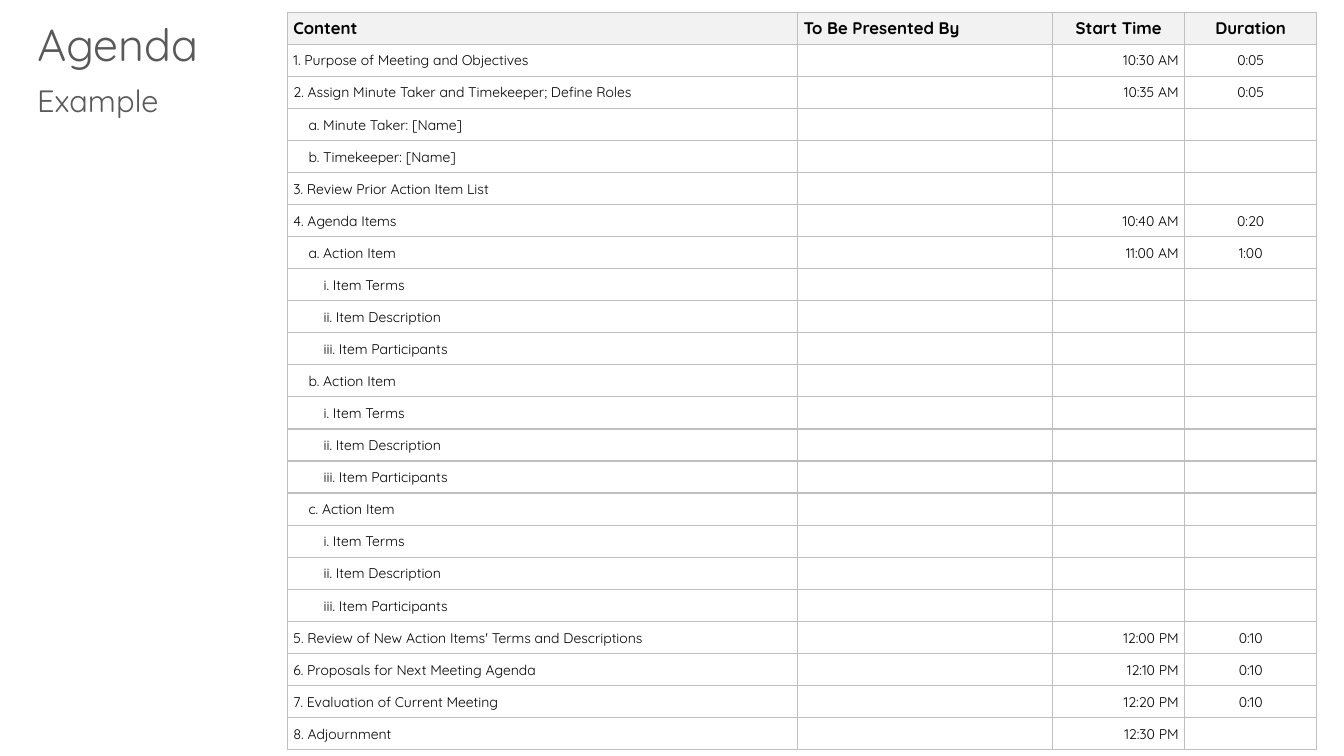
import pptx
import pptx.util
import pptx.dml.color
import pptx.enum.text
import pptx.oxml
import pptx.oxml.ns
from dataclasses import dataclass

Inches = pptx.util.Inches
ALIGN = pptx.enum.text.PP_ALIGN
ANCHOR = pptx.enum.text.MSO_ANCHOR

TITLE = "Agenda"
SUBTITLE = "Example"
# heading, column width, alignment of the body cells
COLUMNS = [
    ("Content", 5.06, ALIGN.LEFT),
    ("To Be Presented By", 2.53, ALIGN.LEFT),
    ("Start Time", 1.31, ALIGN.RIGHT),
    ("Duration", 1.31, ALIGN.CENTER),
]
ITEM_DETAILS = [(2, "i. Item Terms"), (2, "ii. Item Description"), (2, "iii. Item Participants")]
# indent level, content, then start time and duration where known
AGENDA = [
    (0, "1. Purpose of Meeting and Objectives", "10:30 AM", "0:05"),
    (0, "2. Assign Minute Taker and Timekeeper; Define Roles", "10:35 AM", "0:05"),
    (1, "a. Minute Taker: [Name]"),
    (1, "b. Timekeeper: [Name]"),
    (0, "3. Review Prior Action Item List"),
    (0, "4. Agenda Items", "10:40 AM", "0:20"),
    (1, "a. Action Item", "11:00 AM", "1:00"),
    *ITEM_DETAILS,
    (1, "b. Action Item"),
    *ITEM_DETAILS,
    (1, "c. Action Item"),
    *ITEM_DETAILS,
    (0, "5. Review of New Action Items' Terms and Descriptions", "12:00 PM", "0:10"),
    (0, "6. Proposals for Next Meeting Agenda", "12:10 PM", "0:10"),
    (0, "7. Evaluation of Current Meeting", "12:20 PM", "0:10"),
    (0, "8. Adjournment", "12:30 PM"),
]


@dataclass(frozen=True)
class Theme:
    font: str = "Quicksand"
    heading: str = "595959"
    text: str = "000000"
    header_fill: str = "F2F2F2"
    body_fill: str = "FFFFFF"
    border: str = "BFBFBF"
    title_size: int = 32
    subtitle_size: int = 22
    header_size: int = 12
    body_size: int = 10
    border_width: int = 1


THEME = Theme()
TABLE_LEFT, TABLE_TOP, TABLE_HEIGHT = 2.85, 0.12, 7.32
INDENT = 0.15
CELL_PADDING, CELL_EDGE = 0.06, 0.01


def add_run(paragraph, text, size, color, bold=False):
    run = paragraph.add_run()
    run.text = text
    run.font.name = THEME.font
    run.font.size = pptx.util.Pt(size)
    run.font.bold = bold
    run.font.color.rgb = pptx.dml.color.RGBColor.from_string(color)


def write_heading(shape, box, text, size):
    shape.left, shape.top, shape.width, shape.height = map(Inches, box)
    frame = shape.text_frame
    frame.word_wrap = True
    frame.auto_size = pptx.enum.text.MSO_AUTO_SIZE.NONE
    frame.vertical_anchor = ANCHOR.TOP
    paragraph = frame.paragraphs[0]
    paragraph.alignment = ALIGN.LEFT
    add_run(paragraph, text, size, THEME.heading)


def set_borders(cell):
    properties = cell._tc.get_or_add_tcPr()
    for position, side in enumerate(("lnL", "lnR", "lnT", "lnB")):
        line = pptx.oxml.parse_xml(
            f'<a:{side} {pptx.oxml.ns.nsdecls("a")} w="{pptx.util.Pt(THEME.border_width)}">'
            f'<a:solidFill><a:srgbClr val="{THEME.border}"/></a:solidFill></a:{side}>'
        )
        properties.insert(position, line)


def fill_cell(cell, text, alignment, level=0, header=False):
    fill = THEME.header_fill if header else THEME.body_fill
    size = THEME.header_size if header else THEME.body_size
    cell.fill.solid()
    cell.fill.fore_color.rgb = pptx.dml.color.RGBColor.from_string(fill)
    set_borders(cell)
    cell.vertical_anchor = ANCHOR.MIDDLE
    left = CELL_PADDING + level * INDENT if alignment == ALIGN.LEFT else CELL_EDGE
    right = CELL_PADDING if alignment == ALIGN.RIGHT else CELL_EDGE
    cell.margin_left, cell.margin_right = Inches(left), Inches(right)
    cell.margin_top, cell.margin_bottom = Inches(CELL_EDGE), 0
    paragraph = cell.text_frame.paragraphs[0]
    paragraph.alignment = alignment
    if text:
        add_run(paragraph, text, size, THEME.text, header)
    else:
        # Keeps an empty cell from stretching its row.
        paragraph._p.append(pptx.oxml.parse_xml(
            f'<a:endParaRPr {pptx.oxml.ns.nsdecls("a")} sz="{size * 100}"/>'
        ))


def add_agenda_table(slide):
    row_count = len(AGENDA) + 1
    width = sum(column_width for _, column_width, _ in COLUMNS)
    table = slide.shapes.add_table(
        row_count, len(COLUMNS), Inches(TABLE_LEFT), Inches(TABLE_TOP),
        Inches(width), Inches(TABLE_HEIGHT),
    ).table
    table.horz_banding = False
    for row in table.rows:
        row.height = Inches(TABLE_HEIGHT / row_count)
    for column, (heading, column_width, alignment) in enumerate(COLUMNS):
        table.columns[column].width = Inches(column_width)
        header_alignment = ALIGN.LEFT if alignment == ALIGN.LEFT else ALIGN.CENTER
        fill_cell(table.cell(0, column), heading, header_alignment, header=True)
    for row, (level, content, *times) in enumerate(AGENDA, start=1):
        start, duration = (times + ["", ""])[:2]
        for column, text in enumerate((content, "", start, duration)):
            fill_cell(table.cell(row, column), text, COLUMNS[column][2], level)


def main():
    presentation = pptx.Presentation()
    presentation.slide_width = Inches(13.33)
    presentation.slide_height = Inches(7.5)
    slide = presentation.slides.add_slide(presentation.slide_layouts.get_by_name("Title Only"))
    add_agenda_table(slide)
    write_heading(slide.shapes.title, (0.27, 0.12, 2.77, 0.64), TITLE, THEME.title_size)
    subtitle = slide.shapes.add_textbox(0, 0, 0, 0)
    write_heading(subtitle, (0.27, 0.76, 12.03, 0.47), SUBTITLE, THEME.subtitle_size)
    presentation.save("out.pptx")


if __name__ == "__main__":
    main()
